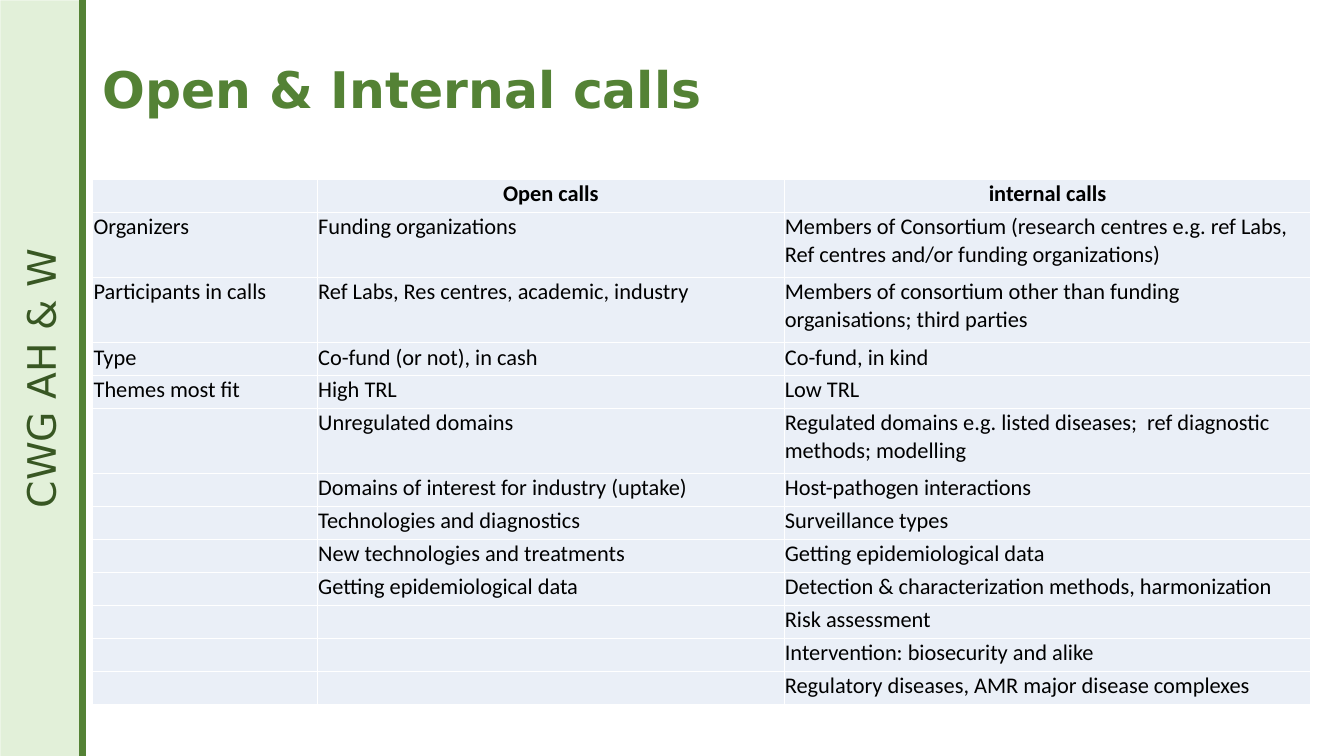
from lxml.etree import SubElement
from pptx import Presentation
from pptx.dml.color import RGBColor
from pptx.enum.shapes import MSO_CONNECTOR, MSO_SHAPE
from pptx.enum.text import MSO_ANCHOR, PP_ALIGN
from pptx.oxml.ns import qn
from pptx.util import Cm, Pt

COLORS = {
    "band": "E2F0D9",
    "dark": "385723",
    "green": "548235",
    "cell": "EAEFF7",
    "edge": "FFFFFF",
    "text": "000000",
}
HEAD_FONT = "DejaVu Sans"
BODY_FONT = "Calibri"

LEFT = Cm(2.34)
COLS = [5.66, 11.76, 13.28]
LOW, TALL = 0.83, 1.64
TALL_ROWS = {1, 2, 5}

ROWS = [
    ("", "Open calls", "internal calls"),
    ("Organizers", "Funding organizations",
     "Members of Consortium (research centres e.g. ref Labs, "
     "Ref centres and/or funding organizations)"),
    ("Participants in calls", "Ref Labs, Res centres, academic, industry",
     "Members of consortium other than funding organisations; third parties"),
    ("Type", "Co-fund (or not), in cash", "Co-fund, in kind"),
    ("Themes most fit", "High TRL", "Low TRL"),
    ("", "Unregulated domains",
     "Regulated domains e.g. listed diseases;  ref diagnostic methods; modelling"),
    ("", "Domains of interest for industry (uptake)", "Host-pathogen interactions"),
    ("", "Technologies and diagnostics", "Surveillance types"),
    ("", "New technologies and treatments", "Getting epidemiological data"),
    ("", "Getting epidemiological data",
     "Detection & characterization methods, harmonization"),
    ("", "", "Risk assessment"),
    ("", "", "Intervention: biosecurity and alike"),
    ("", "", "Regulatory diseases, AMR major disease complexes"),
]


def color(name):
    return RGBColor.from_string(COLORS[name])


def set_text(frame, text, font, size, tint, bold=False, align=PP_ALIGN.LEFT):
    frame.text = text
    para = frame.paragraphs[0]
    para.alignment = align
    for run in para.runs:
        run.font.name = font
        run.font.size = Pt(size)
        run.font.bold = bold
        run.font.color.rgb = color(tint)


def add_band(slide, text):
    # The band is laid flat, then turned to run up the left edge
    long, thick = Cm(19.05), Cm(2.01)
    band = slide.shapes.add_shape(
        MSO_SHAPE.RECTANGLE, Cm(-8.51), Cm(8.53), long, thick)
    band.rotation = 270
    band.shadow.inherit = False
    band.fill.solid()
    band.fill.fore_color.rgb = color("band")
    band.line.fill.background()
    band.text_frame.vertical_anchor = MSO_ANCHOR.MIDDLE
    set_text(band.text_frame, text, HEAD_FONT, 28, "dark", align=PP_ALIGN.CENTER)


def add_rule(slide, left, height):
    rule = slide.shapes.add_connector(MSO_CONNECTOR.STRAIGHT, left, 0, left, height)
    rule.line.color.rgb = color("green")
    rule.line.width = Pt(4.5)
    SubElement(rule._element.spPr, qn("a:effectLst"))


def set_title(slide, text):
    title = slide.shapes.title
    title.left, title.top = LEFT, Cm(0.56)
    title.width, title.height = Cm(30.68), Cm(3.51)
    title.text_frame.vertical_anchor = MSO_ANCHOR.MIDDLE
    set_text(title.text_frame, text, HEAD_FONT, 36, "green", bold=True)
    title.text_frame.paragraphs[0].line_spacing = 0.9


def set_edges(cell):
    props = cell._tc.get_or_add_tcPr()
    for side in ("a:lnL", "a:lnR", "a:lnT", "a:lnB"):
        line = SubElement(props, qn(side), w=str(Pt(1)))
        fill = SubElement(line, qn("a:solidFill"))
        SubElement(fill, qn("a:srgbClr"), val=COLORS["edge"])


def set_cell(cell, text, head):
    cell.margin_left = cell.margin_right = cell.margin_top = Cm(0.02)
    cell.margin_bottom = 0
    set_edges(cell)
    cell.fill.solid()
    cell.fill.fore_color.rgb = color("cell")
    if text:
        align = PP_ALIGN.CENTER if head else PP_ALIGN.LEFT
        set_text(cell.text_frame, text, BODY_FONT, 16, "text", head, align)


def add_grid(slide, rows):
    highs = [TALL if i in TALL_ROWS else LOW for i in range(len(rows))]
    grid = slide.shapes.add_table(
        len(rows), len(COLS), LEFT, Cm(4.53), Cm(sum(COLS)), Cm(sum(highs))).table
    for col, width in zip(grid.columns, COLS):
        col.width = Cm(width)
    for i, (row, high) in enumerate(zip(grid.rows, highs)):
        row.height = Cm(high)
        for cell, text in zip(row.cells, rows[i]):
            set_cell(cell, text, head=i == 0)


def main():
    deck = Presentation()
    deck.slide_width, deck.slide_height = Cm(33.87), Cm(19.05)
    slide = deck.slides.add_slide(deck.slide_layouts[5])

    # Side band
    add_band(slide, "CWG AH & W")
    add_rule(slide, Cm(2.08), deck.slide_height)

    # Title and table
    set_title(slide, "Open & Internal calls")
    add_grid(slide, ROWS)

    deck.save("out.pptx")


if __name__ == "__main__":
    main()
